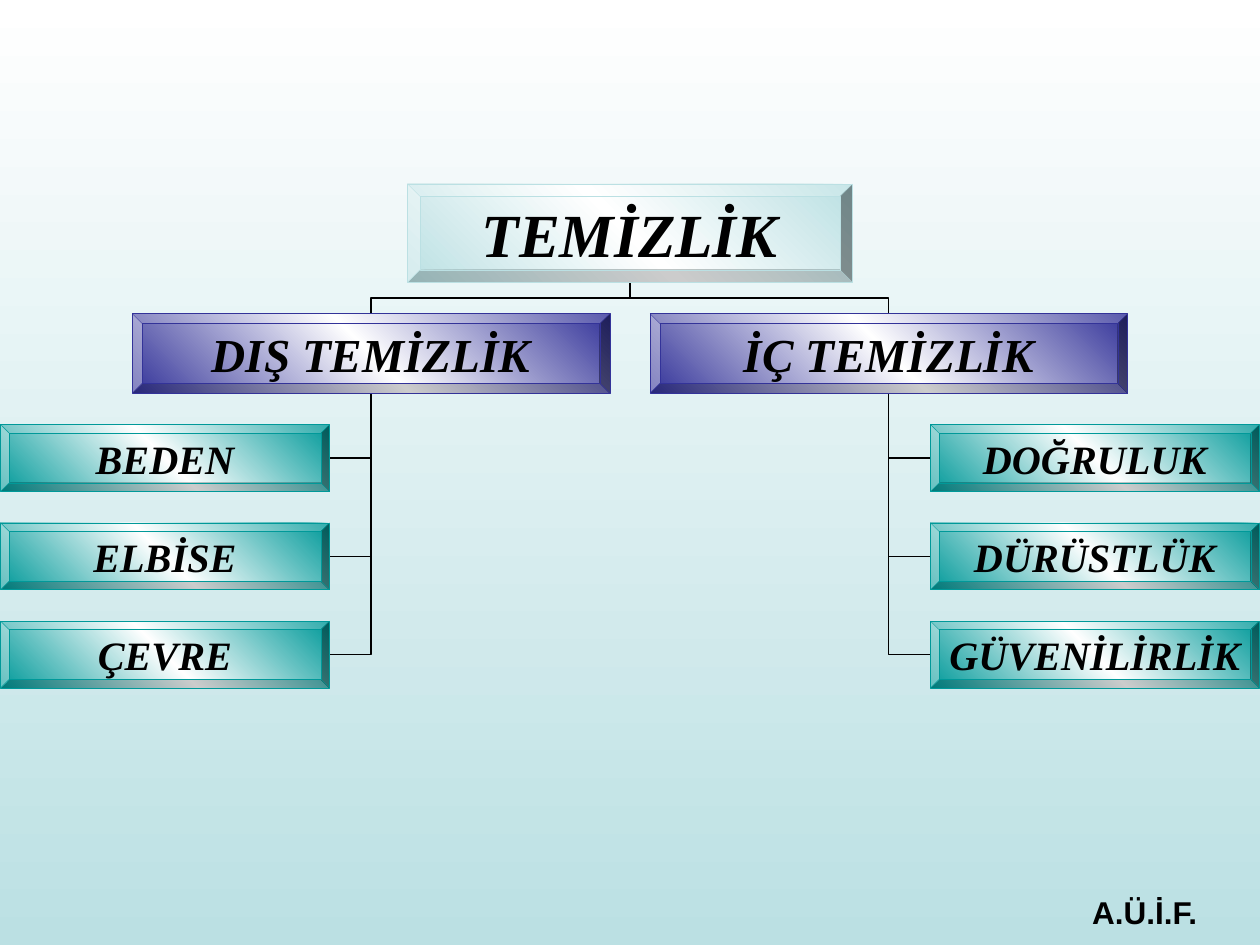
from dataclasses import dataclass

from lxml import etree
from pptx import Presentation
from pptx.dml.color import RGBColor
from pptx.enum.shapes import MSO_CONNECTOR, MSO_SHAPE
from pptx.enum.text import MSO_ANCHOR, MSO_AUTO_SIZE, PP_ALIGN
from pptx.oxml.ns import qn
from pptx.util import Inches, Pt

BEVEL = MSO_SHAPE.BEVEL
ELBOW = MSO_CONNECTOR.ELBOW
MIDDLE = MSO_ANCHOR.MIDDLE
CENTER = PP_ALIGN.CENTER
GROW = MSO_AUTO_SIZE.SHAPE_TO_FIT_TEXT

BLANK = 6
COLS, ROWS = 100, 75
CELL = Inches(0.1)


@dataclass(frozen=True)
class Theme:
    ink: str = "000000"
    white: str = "FFFFFF"
    pale: str = "BBE0E3"
    blue: str = "333399"
    teal: str = "009999"
    serif: str = "Times New Roman"
    sans: str = "Arial"
    root: int = 35
    branch: int = 27
    leaf: int = 23
    foot: int = 18
    edge: float = 0.25
    wire: float = 0.75


def grid(*cells):
    return [round(n * CELL) for n in cells]


def shade(fill, owner, colors, angle):
    """Spread the colors evenly over a gradient; the angle runs clockwise."""
    fill.gradient()
    fill.gradient_angle = (360 - angle) % 360
    stops = next(owner.iter(qn("a:gsLst")))
    for old in list(stops):
        stops.remove(old)
    for i, color in enumerate(colors):
        pos = str(round(100000 * i / (len(colors) - 1)))
        stop = etree.SubElement(stops, qn("a:gs"), pos=pos)
        etree.SubElement(stop, qn("a:srgbClr"), val=color)


def write(frame, text, *, font, size, color, italic=False, align=None):
    para = frame.paragraphs[0]
    para.alignment = align
    run = para.add_run()
    run.text = text
    run.font.name = font
    run.font.size = Pt(size)
    run.font.bold = True
    run.font.italic = italic
    run.font.color.rgb = RGBColor.from_string(color)
    return para


class Chart:
    """Draws the parts of a tree of boxes on one slide."""

    def __init__(self, slide, theme):
        self.slide = slide
        self.theme = theme
        self.tree = slide.shapes.add_group_shape().shapes

    def ground(self):
        t = self.theme
        shade(self.slide.background.fill, self.slide.element, (t.white, t.pale), 90)

    def box(self, text, mid, top, wide, high, color, size):
        t = self.theme
        place = grid(mid - wide / 2, top, wide, high)
        shape = self.tree.add_shape(BEVEL, *place)
        shape.adjustments[0] = 0.125
        shape.shadow.inherit = False
        shade(shape.fill, shape.element, (color, t.white, color), 315)
        shape.line.color.rgb = RGBColor.from_string(color)
        shape.line.width = Pt(t.edge)
        frame = shape.text_frame
        frame.word_wrap = False
        frame.vertical_anchor = MIDDLE
        write(frame, text, font=t.serif, size=size, color=t.ink,
              italic=True, align=CENTER)

    def wire(self, start, end):
        line = self.tree.add_connector(ELBOW, *grid(*start, *end))
        line.line.color.rgb = RGBColor.from_string(self.theme.ink)
        line.line.width = Pt(self.theme.wire)
        props = line.element.spPr
        etree.SubElement(props, qn("a:effectLst"))
        return props

    def bend(self, start, end):
        """Join with one corner: across, then up."""
        props = self.wire(start, end)
        props.find(qn("a:prstGeom")).set("prst", "bentConnector2")

    def fork(self, start, end):
        """Join up, across and up, by turning a level elbow on its side."""
        (x1, y1), (x2, y2) = start, end
        side = 1 if x1 > x2 else -1
        mid, row = (x1 + x2) / 2, (y1 + y2) / 2
        dx, dy = side * abs(y2 - y1) / 2, abs(x2 - x1) / 2
        props = self.wire((mid + dx, row - dy), (mid - dx, row + dy))
        turn = 90 if side > 0 else 270
        props.find(qn("a:xfrm")).set("rot", str(turn * 60000))

    def note(self, text, left, top, wide, high):
        t = self.theme
        shape = self.slide.shapes.add_textbox(*grid(left, top, wide, high))
        frame = shape.text_frame
        frame.word_wrap = True
        frame.auto_size = GROW
        para = write(frame, text, font=t.sans, size=t.foot, color=t.ink)
        dent = Inches(0.38)
        props = para.runs[0].font  # makes sure the run is styled first
        props.italic = False
        look = shape.element.find(".//" + qn("a:p")).get_or_add_pPr()
        look.set("marL", str(dent))
        look.set("indent", str(-dent))


def main():
    theme = Theme()
    deck = Presentation()
    deck.slide_width, deck.slide_height = grid(COLS, ROWS)
    chart = Chart(deck.slides.add_slide(deck.slide_layouts[BLANK]), theme)
    chart.ground()

    mid = COLS / 2
    root = dict(top=14.6, wide=35.3, high=7.8, color=theme.pale, size=theme.root)
    branch = dict(top=24.9, wide=37.9, high=6.3, color=theme.blue, size=theme.branch)
    leaf = dict(wide=26.1, high=5.3, color=theme.teal, size=theme.leaf)
    first, step = 33.7, 7.8
    reach, far = 20.55, 36.9
    sides = (
        (-1, "DIŞ TEMİZLİK", ("BEDEN", "ELBİSE", "ÇEVRE")),
        (1, "İÇ TEMİZLİK", ("DOĞRULUK", "DÜRÜSTLÜK", "GÜVENİLİRLİK")),
    )

    # Lines come first so that the boxes lie over their ends.
    for side, _, names in sides:
        stem = mid + side * reach
        inner = mid + side * (far - leaf["wide"] / 2)
        for i in range(len(names)):
            row = first + i * step + leaf["high"] / 2
            chart.bend((inner, row), (stem, branch["top"] + branch["high"]))
        chart.fork((stem, branch["top"]), (mid, root["top"] + root["high"]))

    chart.box("TEMİZLİK", mid, **root)
    for side, head, names in sides:
        chart.box(head, mid + side * reach, **branch)
        for i, name in enumerate(names):
            chart.box(name, mid + side * far, first + i * step, **leaf)

    chart.note("A.Ü.İ.F.", 85.7, 70.4, 16.5, 5.7)
    deck.save("out.pptx")


if __name__ == "__main__":
    main()
